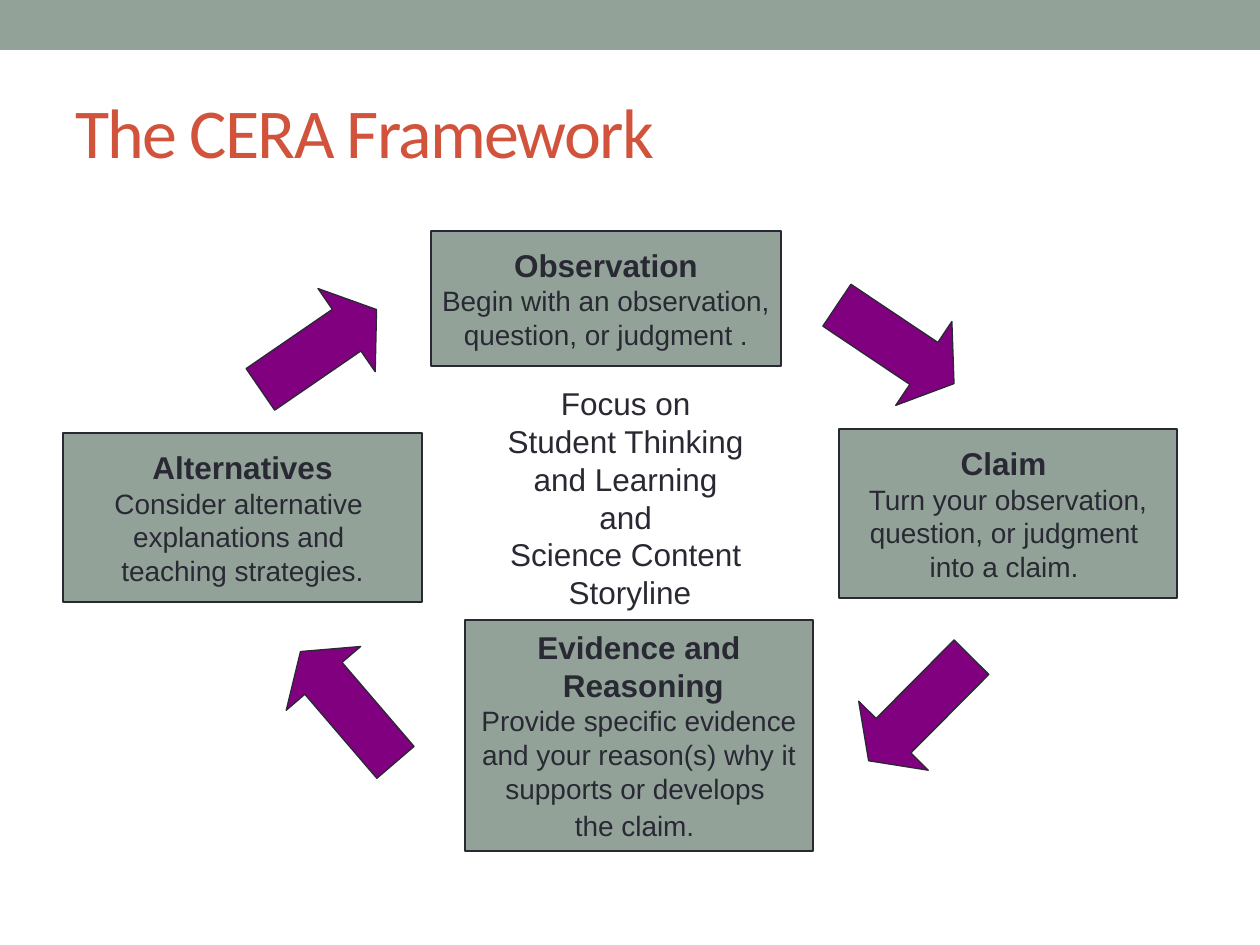
from dataclasses import dataclass

from pptx import Presentation
from pptx.dml.color import RGBColor
from pptx.enum.shapes import MSO_SHAPE
from pptx.enum.text import MSO_ANCHOR, MSO_AUTO_SIZE, PP_ALIGN
from pptx.util import Pt

RECTANGLE = MSO_SHAPE.RECTANGLE
RIGHT_ARROW = MSO_SHAPE.RIGHT_ARROW
MIDDLE = MSO_ANCHOR.MIDDLE
CENTER = PP_ALIGN.CENTER
GROW = MSO_AUTO_SIZE.SHAPE_TO_FIT_TEXT
EMU_PER_PX = 914400 / 126


@dataclass(frozen=True)
class Theme:
    sage: RGBColor = RGBColor.from_string("93A299")
    ink: RGBColor = RGBColor.from_string("292934")
    purple: RGBColor = RGBColor.from_string("800080")
    rust: RGBColor = RGBColor.from_string("D2533C")
    title_font: str = "Calibri"
    body_font: str = "Arial"
    title_size: int = 40
    heading_size: int = 18
    detail_size: int = 16
    outline: float = 0.75


THEME = Theme()

STEPS = [
    ((431, 231, 350, 135), ["Observation"],
     ["Begin with an observation,", "question, or judgment ."]),
    ((63, 433, 359, 169), ["Alternatives"],
     ["Consider alternative ", "explanations and ", "teaching strategies."]),
    ((839, 429, 338, 169), ["Claim "],
     ["Turn your observation,", "question, or judgment ", "into a claim. "]),
    ((465, 620, 348, 231), ["Evidence and", " Reasoning"],
     ["Provide specific evidence", " and your reason(s) why it ",
      "supports or develops ", "the claim."]),
]

ARROWS = [
    ((825, 294, 141, 101), 33.8),
    ((275, 658, 146, 98), 229.4),
    ((847, 660, 146, 98), 134.8),
    ((248, 299, 141, 101), 325.5),
]

FOCUS = ["Focus on ", "Student Thinking ", "and Learning \nand ",
         "Science Content ", "Storyline"]


def px(*lengths):
    return [round(length * EMU_PER_PX) for length in lengths]


def add_run(paragraph, text, size, color=THEME.ink, font=THEME.body_font, bold=False):
    run = paragraph.add_run()
    run.text = text
    run.font.size = Pt(size)
    run.font.name = font
    run.font.bold = bold
    run.font.color.rgb = color
    return run


def add_lines(frame, lines):
    for index, (text, size, bold) in enumerate(lines):
        paragraph = frame.paragraphs[0] if index == 0 else frame.add_paragraph()
        paragraph.alignment = CENTER
        for part_index, part in enumerate(text.split("\n")):
            if part_index:
                paragraph.add_line_break()
            add_run(paragraph, part, size, bold=bold)
    return paragraph


def add_filled(slide, kind, place, fill, outlined=True):
    shape = slide.shapes.add_shape(kind, *px(*place))
    shape.shadow.inherit = False
    shape.fill.solid()
    shape.fill.fore_color.rgb = fill
    if outlined:
        shape.line.color.rgb = THEME.ink
        shape.line.width = Pt(THEME.outline)
    else:
        shape.line.fill.background()
    return shape


def add_title(slide, text):
    frame = slide.shapes.add_textbox(*px(63, 63, 1134, 136)).text_frame
    frame.word_wrap = True
    frame.vertical_anchor = MIDDLE
    run = add_run(frame.paragraphs[0], text, THEME.title_size, THEME.rust, THEME.title_font)
    run.font._element.set("spc", "-100")


def add_step(slide, place, heading, details):
    frame = add_filled(slide, RECTANGLE, place, THEME.sage).text_frame
    frame.word_wrap = False
    frame.vertical_anchor = MIDDLE
    lines = [(text, THEME.heading_size, True) for text in heading]
    lines += [(text, THEME.detail_size, False) for text in details]
    return add_lines(frame, lines)


def add_arrow(slide, place, angle):
    arrow = add_filled(slide, RIGHT_ARROW, place, THEME.purple)
    arrow.adjustments[0] = 0.5
    arrow.adjustments[1] = 0.36
    arrow.rotation = angle


def add_focus(slide, texts):
    frame = slide.shapes.add_textbox(*px(494, 378, 272, 242)).text_frame
    frame.word_wrap = False
    frame.auto_size = GROW
    add_lines(frame, [(text, THEME.heading_size, False) for text in texts])


def main():
    deck = Presentation()
    deck.slide_width, deck.slide_height = px(1260, 945)
    slide = deck.slides.add_slide(deck.slide_layouts[6])
    add_filled(slide, RECTANGLE, (0, 0, 1260, 50), THEME.sage, outlined=False)
    add_title(slide, "The CERA Framework")
    for place, heading, details in STEPS:
        last_line = add_step(slide, place, heading, details)
    add_run(last_line, " ", THEME.heading_size)
    for place, angle in ARROWS:
        add_arrow(slide, place, angle)
    add_focus(slide, FOCUS)
    deck.save("out.pptx")


if __name__ == "__main__":
    main()
